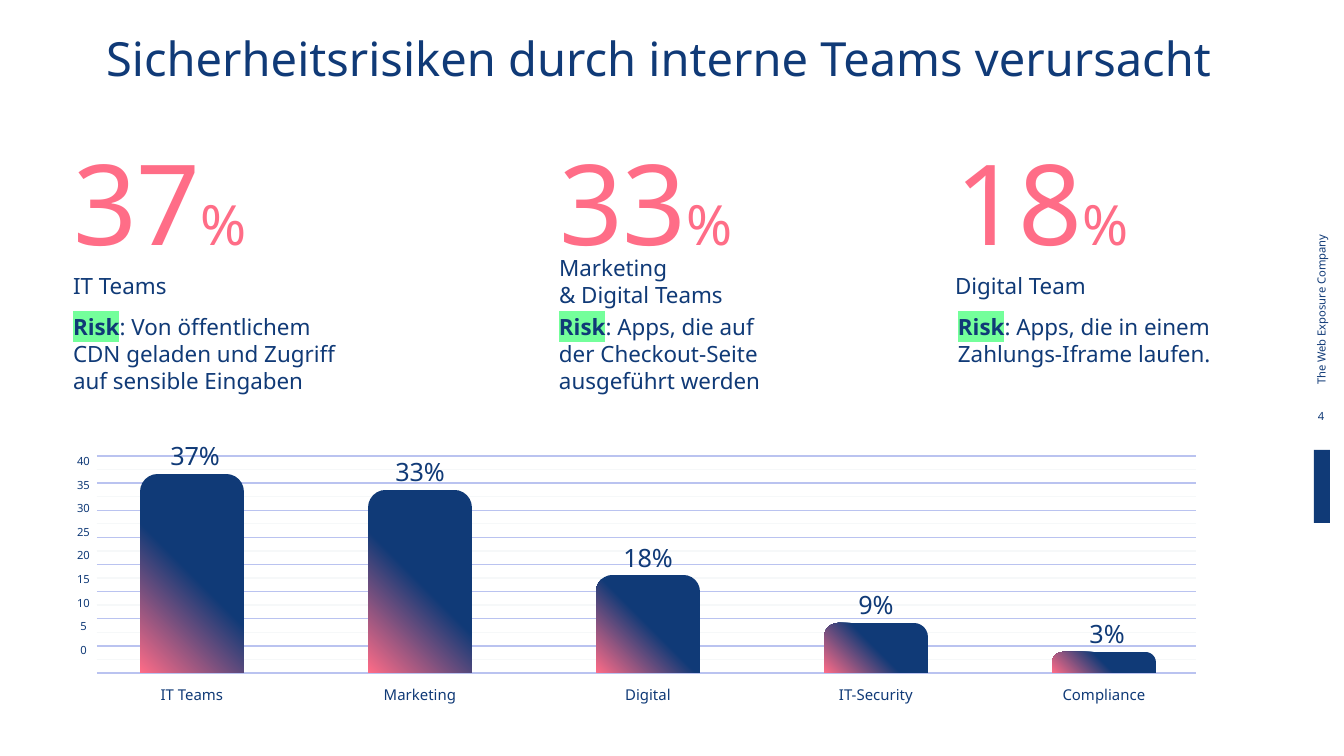
import copy

import pptx
import pptx.dml.color
import pptx.enum.shapes
import pptx.enum.text
import pptx.oxml
import pptx.oxml.ns
import pptx.util

PX = 914400 / 134.4
NAVY = "103A77"
PINK = "FF6D87"
CENTER = pptx.enum.text.PP_ALIGN.CENTER
LEFT = pptx.enum.text.PP_ALIGN.LEFT
qn = pptx.oxml.ns.qn
NS = pptx.oxml.ns.nsdecls("a")


def rgb(value):
    return pptx.dml.color.RGBColor.from_string(value)


def add_text(box, lines, size, color=NAVY, align=LEFT, spacing=1.0, tail=None, margin=13):
    label = slide.shapes.add_textbox(*[round(v * PX) for v in box])
    frame = label.text_frame
    frame.word_wrap = True
    frame.margin_left = frame.margin_right = round(margin * PX)
    frame.margin_top = frame.margin_bottom = round(margin * PX)
    for index, line in enumerate(lines):
        paragraph = frame.paragraphs[0] if index == 0 else frame.add_paragraph()
        paragraph.text = line
        paragraph.alignment = align
        paragraph.line_spacing = spacing
        if tail:
            paragraph.add_run().text = tail[0]
        for run in paragraph.runs:
            run.font.name = "Noto Sans"
            run.font.size = pptx.util.Pt(size)
            run.font.color.rgb = rgb(color)
        if tail:
            paragraph.runs[-1].font.size = pptx.util.Pt(tail[1])
    return label


presentation = pptx.Presentation()
presentation.slide_width = round(1344 * PX)
presentation.slide_height = round(756 * PX)
slide = presentation.slides.add_slide(presentation.slide_layouts[6])

page_number = add_text((1298, 399, 46, 34), ["4"], 6, align=CENTER)
tagline = add_text((1245, 296, 152, 26), ["The Web Exposure Company"], 6, margin=0)
tagline.rotation = 270
for side_text in (page_number, tagline):
    side_text.text_frame.vertical_anchor = pptx.enum.text.MSO_ANCHOR.MIDDLE

brand_block = slide.shapes.add_shape(
    pptx.enum.shapes.MSO_SHAPE.RECTANGLE, *[round(v * PX) for v in (1314, 450, 16, 73)])
brand_block.shadow.inherit = False
brand_block.fill.solid()
brand_block.fill.fore_color.rgb = rgb(NAVY)
brand_block.line.fill.background()

add_text((32, 17, 1253, 85), ["Sicherheitsrisiken durch interne Teams verursacht"], 25.2, align=CENTER)

findings = [
    (60, "37", "IT Teams", 259, 60, 304,
     ": Von öffentlichem CDN geladen und Zugriff auf sensible Eingaben"),
    (546, "33", "Marketing\n& Digital Teams", 241, 546, 258,
     ": Apps, die auf der Checkout-Seite ausgeführt werden"),
    (942, "18", "Digital Team", 259, 945, 285,
     ": Apps, die in einem Zahlungs-Iframe laufen."),
]
for left, share, team, team_top, risk_left, risk_width, risk in findings:
    add_text((left, 110, 219, 134), [share], 59.9, PINK, spacing=1.08, tail=("%", 29.7))
    add_text((left, team_top, 208, 50), [team], 12)
    risk_text = add_text((risk_left, 300, risk_width, 67), ["Risk"], 12, tail=(risk, 12))
    keyword = risk_text.text_frame.paragraphs[0].runs[0]
    keyword.font.bold = True
    highlight = pptx.oxml.parse_xml(f'<a:highlight {NS}><a:srgbClr val="74FF9B"/></a:highlight>')
    keyword.font._element.find(qn("a:solidFill")).addnext(highlight)

add_text((60, 431, 47, 254), [str(tick) for tick in range(40, -1, -5)], 6,
         align=CENTER, spacing=1.76)

AXIS_TOP, AXIS_BOTTOM = 456, 673
for step in range(17):
    y = round((AXIS_TOP + (AXIS_BOTTOM - AXIS_TOP) * step / 16) * PX)
    gridline = slide.shapes.add_connector(
        pptx.enum.shapes.MSO_CONNECTOR.STRAIGHT, round(97 * PX), y, round(1196 * PX), y)
    gridline.line.color.rgb = rgb("F6F8F9" if step % 2 else "BAC3F0")
    gridline.line.width = pptx.util.Pt(0.75)
    gridline._element.spPr.append(pptx.oxml.parse_xml(f"<a:effectLst {NS}/>"))

bars = [
    ("IT Teams", "37%", 474, 0.17, 140, 425),
    ("Marketing", "33%", 490, 0.17, 365, 441),
    ("Digital", "18%", 575, 0.17, 593, 527),
    ("IT-Security", "9%", 623, 0.28, 821, 574),
    ("Compliance", "3%", 652, 0.5, 1052, 603),
]
for index, (team, share, top, rounding, share_left, share_top) in enumerate(bars):
    left = 140 + 228 * index
    bar = slide.shapes.add_shape(
        pptx.enum.shapes.MSO_SHAPE.ROUND_2_SAME_RECTANGLE,
        *[round(v * PX) for v in (left, top, 104, AXIS_BOTTOM - top)])
    bar.adjustments[0] = rounding
    bar.adjustments[1] = 0
    bar.shadow.inherit = False
    bar.line.fill.background()
    bar.fill.gradient()
    bar.fill.gradient_angle = 225
    first_stop = bar._element.spPr.find(qn("a:gradFill")).find(qn("a:gsLst"))[0]
    first_stop.addnext(copy.deepcopy(first_stop))
    for stop, position, color in zip(bar.fill.gradient_stops, (0, 0.5, 1), (NAVY, NAVY, "FF6C87")):
        stop.position = position
        stop.color.rgb = rgb(color)
    add_text((left - 8, 677, 120, 35), [team], 8, align=CENTER)
    add_text((share_left, share_top, 110, 44), [share], 13.5, align=CENTER, spacing=1.08)

presentation.save("out.pptx")
